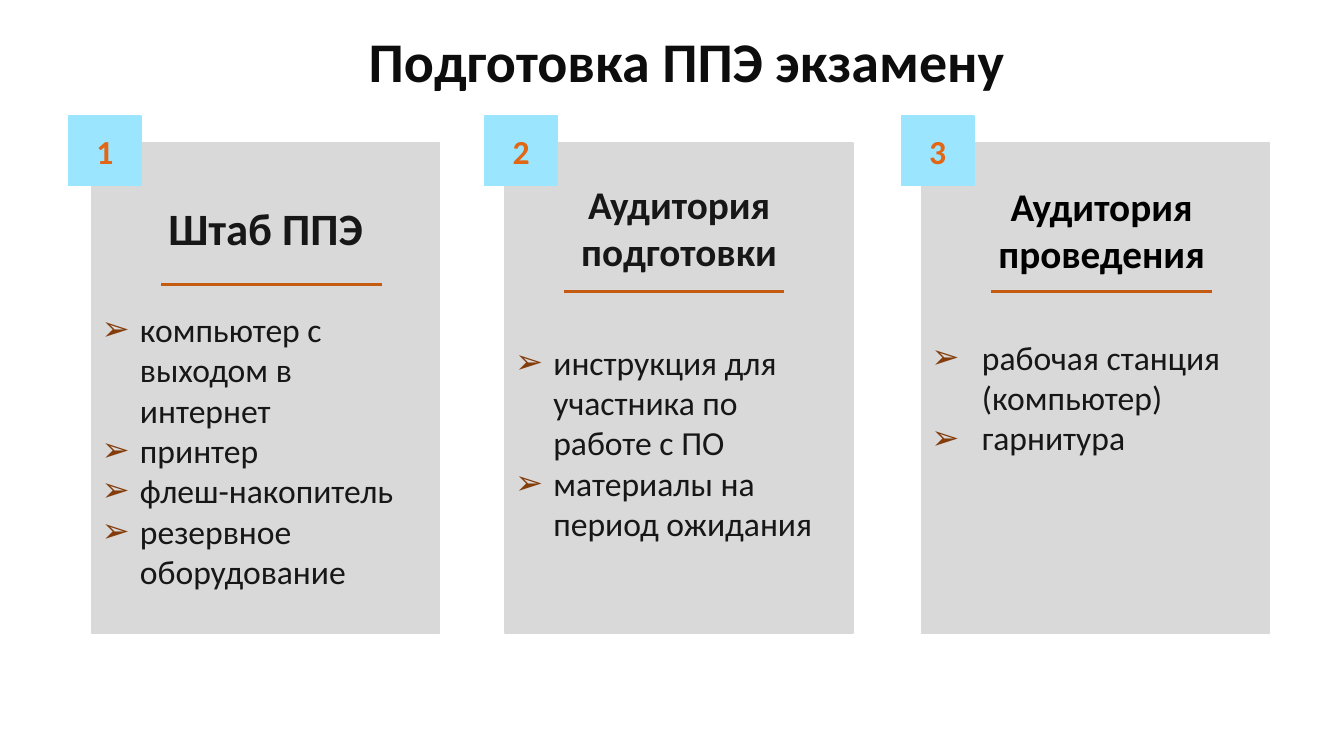
from dataclasses import dataclass
from typing import Optional

from lxml.etree import SubElement
from pptx import Presentation
from pptx.dml.color import RGBColor
from pptx.enum.shapes import MSO_CONNECTOR, MSO_SHAPE
from pptx.enum.text import MSO_ANCHOR, MSO_AUTO_SIZE, PP_ALIGN
from pptx.oxml.ns import qn
from pptx.shapes.autoshape import Shape
from pptx.slide import Slide
from pptx.text.text import TextFrame, _Paragraph
from pptx.util import Emu, Pt

EMU_PER_PX = 9144


@dataclass(frozen=True)
class Theme:
    font: str = "Calibri"
    card: str = "D9D9D9"
    badge: str = "9BE5FF"
    number: str = "E26714"
    rule: str = "C55A11"
    bullet: str = "843C0B"
    text: str = "181717"
    title: str = "0D0D0D"
    black: str = "000000"
    title_size: int = 40
    large_heading_size: int = 32
    heading_size: int = 28
    body_size: int = 24


@dataclass(frozen=True)
class Box:
    left: int
    top: int
    width: int
    height: int


@dataclass(frozen=True)
class Room:
    heading: str
    items: tuple[str, ...]
    card_left: int
    badge_left: int
    rule_left: int
    rule_top: int
    top_inset: int
    heading_size: int = 28
    heading_gap: int = 0
    indent: int = 38
    heading_box: Optional[Box] = None


THEME = Theme()
ROOMS = (
    Room(
        "Штаб ППЭ",
        ("компьютер с выходом в интернет", "принтер", "флеш-накопитель", "резервное оборудование"),
        card_left=91, badge_left=68, rule_left=160, rule_top=282,
        top_inset=57, heading_size=THEME.large_heading_size, heading_gap=39,
    ),
    Room(
        "Аудитория подготовки",
        ("инструкция для участника по работе с ПО", "материалы на период ожидания"),
        card_left=501, badge_left=481, rule_left=559, rule_top=289,
        top_inset=37, heading_size=THEME.heading_size, heading_gap=48,
    ),
    Room(
        "Аудитория проведения",
        ("рабочая станция (компьютер)", "гарнитура"),
        card_left=914, badge_left=894, rule_left=983, rule_top=289,
        top_inset=192, heading_size=THEME.heading_size, indent=50,
        heading_box=Box(962, 176, 261, 104),
    ),
)


def px(length: int) -> Emu:
    return Emu(length * EMU_PER_PX)


def place(box: Box) -> tuple[Emu, Emu, Emu, Emu]:
    return px(box.left), px(box.top), px(box.width), px(box.height)


def write(
    frame: TextFrame, text: str, *, size: int, color: str, bold: bool = False,
    align: PP_ALIGN = PP_ALIGN.CENTER, space_after: int = 0,
) -> _Paragraph:
    paragraph = frame.paragraphs[0] if not frame.text else frame.add_paragraph()
    paragraph.alignment = align
    paragraph.line_spacing = 1.0
    paragraph.space_before = Pt(0)
    paragraph.space_after = Pt(space_after)
    run = paragraph.add_run()
    run.text = text
    run.font.name = THEME.font
    run.font.size = Pt(size)
    run.font.bold = bold
    run.font.color.rgb = RGBColor.from_string(color)
    return paragraph


def add_bullet(paragraph: _Paragraph, indent: int) -> None:
    properties = paragraph._p.get_or_add_pPr()
    properties.set("marL", str(px(indent)))
    properties.set("indent", str(-px(indent)))
    bullet_color = SubElement(properties, qn("a:buClr"))
    SubElement(bullet_color, qn("a:srgbClr"), val=THEME.bullet)
    SubElement(properties, qn("a:buFont"), typeface="Arial")
    SubElement(properties, qn("a:buChar"), char="➢")


def add_panel(slide: Slide, box: Box, color: str, anchor: MSO_ANCHOR) -> Shape:
    panel = slide.shapes.add_shape(MSO_SHAPE.RECTANGLE, *place(box))
    panel.shadow.inherit = False
    panel.fill.solid()
    panel.fill.fore_color.rgb = RGBColor.from_string(color)
    panel.line.color.rgb = RGBColor.from_string(color)
    panel.line.width = Pt(1)
    panel.text_frame.word_wrap = True
    panel.text_frame.vertical_anchor = anchor
    return panel


def add_rule(slide: Slide, left: int, top: int, width: int) -> None:
    rule = slide.shapes.add_connector(
        MSO_CONNECTOR.STRAIGHT, px(left), px(top), px(left + width), px(top)
    )
    rule.line.color.rgb = RGBColor.from_string(THEME.rule)
    rule.line.width = Pt(2.25)
    SubElement(rule._element.spPr, qn("a:effectLst"))


def add_title(slide: Slide, text: str) -> None:
    title = slide.shapes.title
    title.left, title.top, title.width, title.height = place(Box(68, 21, 1226, 77))
    frame = title.text_frame
    frame.word_wrap = True
    frame.auto_size = MSO_AUTO_SIZE.NONE
    frame.vertical_anchor = MSO_ANCHOR.TOP
    write(frame, text, size=THEME.title_size, color=THEME.title, bold=True)


def add_room(slide: Slide, number: int, room: Room) -> None:
    card = add_panel(slide, Box(room.card_left, 142, 345, 486), THEME.card, MSO_ANCHOR.TOP)
    card.text_frame.margin_top = px(room.top_inset)
    heading_frame = card.text_frame
    heading_color = THEME.text
    if room.heading_box:
        heading_frame = slide.shapes.add_textbox(*place(room.heading_box)).text_frame
        heading_frame.word_wrap = True
        heading_color = THEME.black
    write(
        heading_frame, room.heading, size=room.heading_size, color=heading_color,
        bold=True, space_after=room.heading_gap,
    )
    for item in room.items:
        paragraph = write(
            card.text_frame, item, size=THEME.body_size, color=THEME.text, align=PP_ALIGN.LEFT
        )
        add_bullet(paragraph, room.indent)
    badge = add_panel(slide, Box(room.badge_left, 115, 72, 69), THEME.badge, MSO_ANCHOR.MIDDLE)
    write(badge.text_frame, str(number), size=THEME.body_size, color=THEME.number, bold=True)
    add_rule(slide, room.rule_left, room.rule_top, 219)


def main() -> None:
    presentation = Presentation()
    presentation.slide_width = px(1333)
    presentation.slide_height = px(750)
    slide = presentation.slides.add_slide(presentation.slide_layouts[5])
    add_title(slide, "Подготовка ППЭ экзамену")
    for number, room in enumerate(ROOMS, start=1):
        add_room(slide, number, room)
    presentation.save("out.pptx")


if __name__ == "__main__":
    main()
